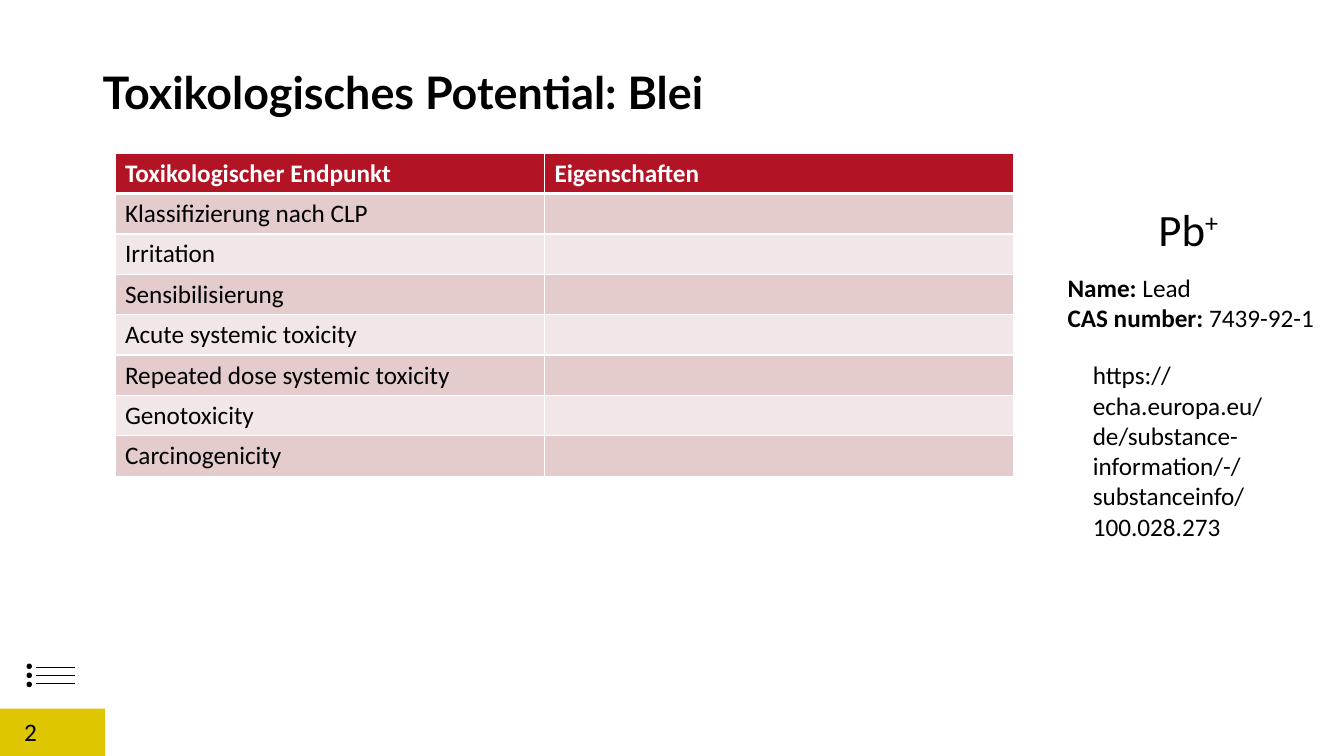
from lxml import etree
from pptx import Presentation, util as u
from pptx.dml.color import RGBColor
from pptx.enum import shapes, text
from pptx.oxml import ns

PX = 9144  # EMU per px, 100 px to the inch
BLACK, WHITE, YELLOW, RED = "000000", "FFFFFF", "DEC700", "B21426"
BANDS = ("E4CCCD", "F2E7E8")
ENDPOINTS = ("Klassifizierung nach CLP", "Irritation", "Sensibilisierung",
             "Acute systemic toxicity", "Repeated dose systemic toxicity",
             "Genotoxicity", "Carcinogenicity")
URL = "https://echa.europa.eu/de/substance-information/-/substanceinfo/100.028.273"


def px(*lengths):
    return [u.Emu(length * PX) for length in lengths]


def paint(color_format, color):
    color_format.rgb = RGBColor.from_string(color)


def add_run(paragraph, content, size=18, bold=False, color=BLACK, font="Calibri"):
    run = paragraph.add_run()
    run.text = content
    run.font.size = u.Pt(size)
    run.font.name = font
    run.font.bold = bold
    paint(run.font.color, color)
    return run


def add_text_box(slide, box, anchor=text.MSO_ANCHOR.TOP):
    frame = slide.shapes.add_textbox(*px(*box)).text_frame
    frame.word_wrap = True
    frame.vertical_anchor = anchor
    return frame


def add_solid(slide, kind, box, color, line_width=0):
    shape = slide.shapes.add_shape(kind, *px(*box))
    shape.shadow.inherit = False
    shape.fill.solid()
    paint(shape.fill.fore_color, color)
    if line_width:
        paint(shape.line.color, color)
        shape.line.width = u.Pt(line_width)
    else:
        shape.line.fill.background()


def add_line(slide, x1, y1, x2, y2):
    line = slide.shapes.add_connector(
        shapes.MSO_CONNECTOR.STRAIGHT, *px(x1, y1, x2, y2))
    paint(line.line.color, BLACK)
    line.line.width = u.Pt(0.5)
    etree.SubElement(line._element.spPr, ns.qn("a:effectLst"))


def style_cell(cell, fill, bottom=1, top=1):
    properties = cell._tc.get_or_add_tcPr()
    for side, width in (("L", 1), ("R", 1), ("T", top), ("B", bottom)):
        border = etree.SubElement(properties, ns.qn(f"a:ln{side}"), w=str(u.Pt(width)))
        solid = etree.SubElement(border, ns.qn("a:solidFill"))
        etree.SubElement(solid, ns.qn("a:srgbClr"), val=WHITE)
    cell.fill.solid()
    paint(cell.fill.fore_color, fill)


def add_endpoint_table(slide):
    rows = [("Toxikologischer Endpunkt", "Eigenschaften")]
    rows += [(endpoint, "") for endpoint in ENDPOINTS]
    table = slide.shapes.add_table(
        len(rows), 2, *px(114, 152, 891, 40 * len(rows))).table
    for column, width in zip(table.columns, px(426, 465)):
        column.width = width
    for row, contents in enumerate(rows):
        header = row == 0
        for column, content in enumerate(contents):
            cell = table.cell(row, column)
            style_cell(cell, RED if header else BANDS[(row - 1) % 2],
                       bottom=3 if header else 1, top=3 if row == 1 else 1)
            paragraph = cell.text_frame.paragraphs[0]
            if content:
                add_run(paragraph, content, bold=header,
                        color=WHITE if header else BLACK)
            else:
                paragraph.font.size = u.Pt(18)


def add_substance(slide):
    facts = add_text_box(slide, (1049, 265, 270, 71))
    for index, (label, value) in enumerate(
            (("Name: ", "Lead"), ("CAS number: ", "7439-92-1"))):
        paragraph = facts.add_paragraph() if index else facts.paragraphs[0]
        add_run(paragraph, label, bold=True)
        add_run(paragraph, value)

    symbol = add_text_box(slide, (1070, 195, 217, 64)).paragraphs[0]
    symbol.alignment = text.PP_ALIGN.CENTER
    add_run(symbol, "Pb", size=32)
    charge = add_run(symbol, "+", size=32)
    charge._r.get_or_add_rPr().set("baseline", "30000")

    add_run(add_text_box(slide, (1074, 352, 213, 162)).paragraphs[0], URL)


def main():
    presentation = Presentation()
    presentation.slide_width, presentation.slide_height = px(1333, 750)
    slide = presentation.slides.add_slide(presentation.slide_layouts[6])

    # List icon
    for row in range(3):
        add_line(slide, 36, 662 + 8 * row, 74, 662 + 8 * row)
    for row in range(3):
        add_solid(slide, shapes.MSO_SHAPE.OVAL, (27, 659 + 9 * row, 4, 4), BLACK, 1)

    # Page number on its yellow block
    add_solid(slide, shapes.MSO_SHAPE.RECTANGLE, (0, 703, 104, 47), YELLOW)
    add_run(add_text_box(slide, (14, 706, 89, 44)).paragraphs[0], "2")

    # Title
    title = add_text_box(slide, (92, 48, 773, 75), text.MSO_ANCHOR.BOTTOM).paragraphs[0]
    title.line_spacing = 0.9
    add_run(title, "Toxikologisches Potential: Blei", size=32, bold=True, font="Lato")

    # Content
    add_endpoint_table(slide)
    add_substance(slide)
    presentation.save("out.pptx")


if __name__ == "__main__":
    main()
